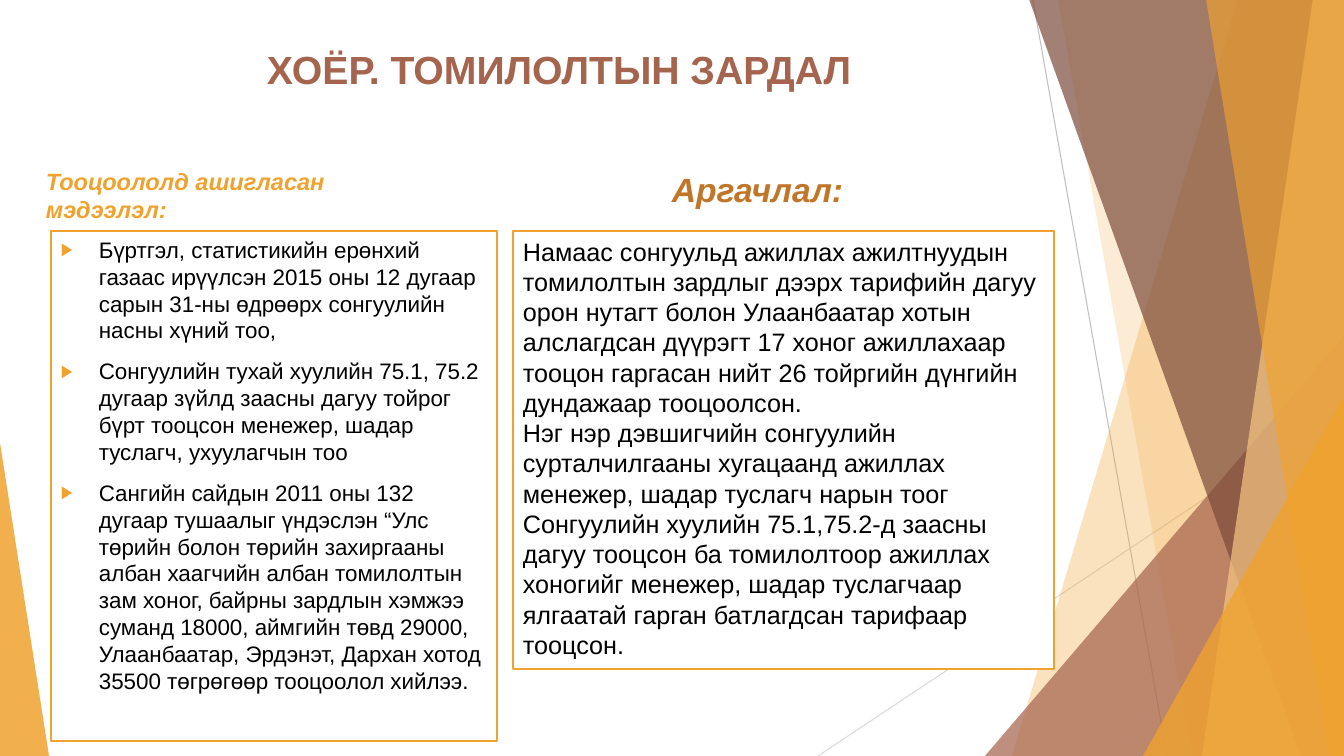
import pptx
import pptx.util
import pptx.dml.color
import pptx.enum.shapes
import pptx.enum.text
import pptx.oxml.ns
from dataclasses import dataclass
from lxml import etree


@dataclass(frozen=True)
class Theme:
    font: str = "Arial"
    amber: str = "F0A22E"
    sand: str = "F6C782"
    rust: str = "A5644E"
    brown: str = "7C4B3B"
    ochre: str = "C17529"
    white: str = "FFFFFF"
    black: str = "000000"
    title: float = 28
    heading: float = 24
    subheading: float = 16.8
    body: float = 18
    bullets: float = 16
    spacing: float = 10
    border: float = 1.5
    hairline: float = 0.75


T = Theme()
W, H = 1344, 756
EMU_PER_PX = 914400 / 100.8
BULLET_INDENT = 38

TITLE = "ХОЁР. ТОМИЛОЛТЫН ЗАРДАЛ"
SOURCES_HEADING = "Тооцоололд ашигласан мэдээлэл:"
METHOD_HEADING = "Аргачлал:"
SOURCES = [
    "Бүртгэл, статистикийн ерөнхий газаас ирүүлсэн 2015 оны 12 дугаар сарын 31-ны өдрөөрх сонгуулийн насны хүний тоо,",
    "Сонгуулийн тухай хуулийн 75.1, 75.2 дугаар зүйлд заасны дагуу тойрог бүрт тооцсон менежер, шадар туслагч, ухуулагчын тоо",
    "Сангийн сайдын 2011 оны 132 дугаар тушаалыг үндэслэн “Улс төрийн болон төрийн захиргааны албан хаагчийн албан томилолтын зам хоног, байрны зардлын хэмжээ суманд 18000, аймгийн төвд 29000, Улаанбаатар, Эрдэнэт, Дархан хотод 35500 төгрөгөөр тооцоолол хийлээ.",
]
METHOD = [
    "Намаас сонгуульд ажиллах ажилтнуудын томилолтын зардлыг дээрх тарифийн дагуу орон нутагт болон Улаанбаатар хотын алслагдсан дүүрэгт 17 хоног ажиллахаар тооцон гаргасан нийт 26 тойргийн дүнгийн дундажаар тооцоолсон.",
    "Нэг нэр дэвшигчийн сонгуулийн сурталчилгааны хугацаанд ажиллах менежер, шадар туслагч нарын тоог Сонгуулийн хуулийн 75.1,75.2-д заасны дагуу тооцсон ба томилолтоор ажиллах хоногийг менежер, шадар туслагчаар ялгаатай гарган батлагдсан тарифаар тооцсон.",
]

LINES = [
    ((1033, 0), (1167, H), "BFBFBF"),
    ((W, 406), (818, H), "D9D9D9"),
]
# kind, geometry, colour, opacity
FACETS = [
    ("band", (1238, 1012), T.amber, 30),
    ("band", (1058, 1192), T.amber, 20),
    ("triangle", (985, 336, W, 1), T.rust, 72),
    ("band", (1029, 1301), T.brown, 70),
    ("band", (1313, 1202), T.sand, 70),
    ("band", (1206, 1329), T.amber, 65),
    ("triangle", (1143, 396, W, 1), T.amber, 80),
    ("triangle", (0, 443, 49, 0), T.amber, 85),
]


def px(n):
    return pptx.util.Emu(round(n * EMU_PER_PX))


def rgb(c):
    return pptx.dml.color.RGBColor.from_string(c)


def sub(parent, tag, **attrs):
    return etree.SubElement(parent, pptx.oxml.ns.qn(tag), attrs)


def add_line(s, start, end, color):
    c = s.shapes.add_connector(
        pptx.enum.shapes.MSO_CONNECTOR.STRAIGHT, *map(px, start + end))
    c.line.color.rgb = rgb(color)
    c.line.width = pptx.util.Pt(T.hairline)
    sub(c._element.spPr, "a:effectLst")


def add_facet(s, kind, geometry, color, opacity):
    if kind == "band":
        top, bottom = geometry
        fb = s.shapes.build_freeform(top, -1, scale=EMU_PER_PX)
        fb.add_line_segments([(W, -1), (W, H), (bottom, H)], close=True)
        sp = fb.convert_to_shape()
    else:
        left, top, right, apex = geometry
        sp = s.shapes.add_shape(
            pptx.enum.shapes.MSO_SHAPE.ISOSCELES_TRIANGLE,
            px(left), px(top), px(right - left), px(H - top))
        sp.adjustments[0] = apex
    sp.shadow.inherit = False
    sp.fill.solid()
    sp.fill.fore_color.rgb = rgb(color)
    sp.line.fill.background()
    clr = sp._element.spPr.find(".//" + pptx.oxml.ns.qn("a:srgbClr"))
    sub(clr, "a:alpha", val=str(opacity * 1000))


def add_bullet(p):
    p.space_before = pptx.util.Pt(T.spacing)
    pPr = p._p.get_or_add_pPr()
    pPr.set("marL", str(px(BULLET_INDENT)))
    pPr.set("indent", str(-px(BULLET_INDENT)))
    sub(sub(pPr, "a:buClr"), "a:srgbClr", val=T.amber)
    sub(pPr, "a:buSzPct", val="80000")
    sub(pPr, "a:buFont", typeface=T.font)
    sub(pPr, "a:buChar", char="▶")


def add_text(s, box, paragraphs, size, color, bold=False, italic=False,
             center=False, framed=False, bulleted=False):
    box = [px(n) for n in box]
    if framed:
        sp = s.shapes.add_shape(pptx.enum.shapes.MSO_SHAPE.RECTANGLE, *box)
        sp.shadow.inherit = False
        sp.fill.solid()
        sp.fill.fore_color.rgb = rgb(T.white)
        sp.line.color.rgb = rgb(T.amber)
        sp.line.width = pptx.util.Pt(T.border)
    else:
        sp = s.shapes.add_textbox(*box)
    tf = sp.text_frame
    tf.word_wrap = True
    tf.vertical_anchor = pptx.enum.text.MSO_ANCHOR.TOP
    align = pptx.enum.text.PP_ALIGN
    for i, text in enumerate(paragraphs):
        p = tf.add_paragraph() if i else tf.paragraphs[0]
        p.alignment = align.CENTER if center else align.LEFT
        if bulleted:
            add_bullet(p)
        r = p.add_run()
        r.text = text
        r.font.name = T.font
        r.font.size = pptx.util.Pt(size)
        r.font.bold = bold
        r.font.italic = italic
        r.font.color.rgb = rgb(color)


def main():
    prs = pptx.Presentation()
    prs.slide_width, prs.slide_height = px(W), px(H)
    s = prs.slides.add_slide(prs.slide_layouts[6])
    for line in LINES:
        add_line(s, *line)
    for facet in FACETS:
        add_facet(s, *facet)
    add_text(s, (85, 40, 948, 67), [TITLE], T.title, T.rust, bold=True, center=True)
    add_text(s, (51, 231, 446, 510), SOURCES, T.bullets, T.black,
             framed=True, bulleted=True)
    add_text(s, (36, 162, 342, 57), [SOURCES_HEADING], T.subheading, T.amber,
             bold=True, italic=True)
    add_text(s, (662, 164, 242, 57), [METHOD_HEADING], T.heading, T.ochre,
             bold=True, italic=True)
    add_text(s, (513, 231, 541, 438), METHOD, T.body, T.black, framed=True)
    prs.save("out.pptx")


if __name__ == "__main__":
    main()
